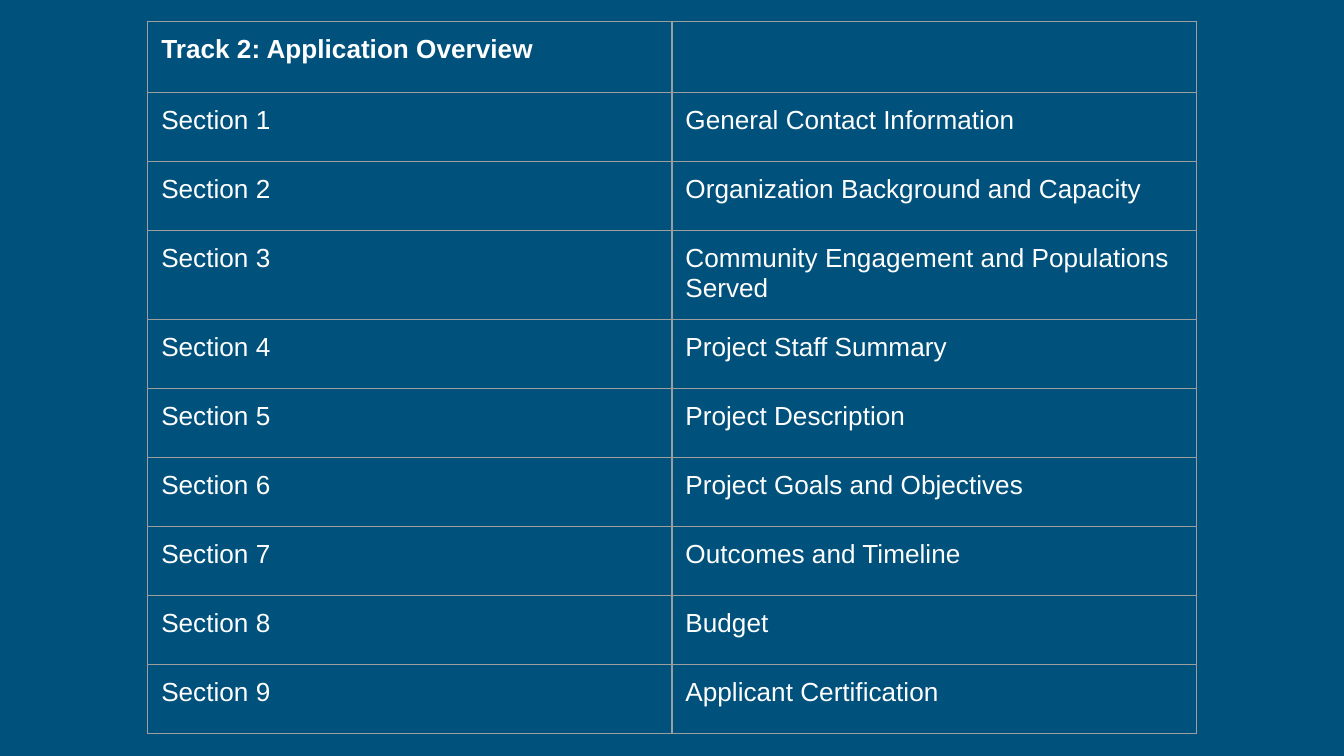
from dataclasses import dataclass

import pptx
import pptx.dml.color
import pptx.oxml
import pptx.oxml.ns
import pptx.slide
import pptx.table
import pptx.util
from pptx.util import Inches


@dataclass(frozen=True)
class Theme:
    background: str = "00517C"
    text: str = "FFFFFF"
    border: str = "9E9E9E"
    font: str = "Arial"
    text_size: float = 14
    border_width: float = 0.75


THEME = Theme()
SLIDE_WIDTH = 10
SLIDE_HEIGHT = SLIDE_WIDTH * 9 / 16
LEFT, TOP = 1.1, 0.16
COLUMN_WIDTH = 3.9
CELL_MARGIN = 0.1
HEADING_HEIGHT = 0.53
SECTION_HEIGHT = 37 / 72
TWO_LINE_HEIGHT = 0.66


@dataclass(frozen=True)
class OverviewRow:
    label: str
    topic: str
    height: float = SECTION_HEIGHT
    bold: bool = False


TOPICS = [
    "General Contact Information",
    "Organization Background and Capacity",
    "Community Engagement and Populations Served",
    "Project Staff Summary",
    "Project Description",
    "Project Goals and Objectives",
    "Outcomes and Timeline",
    "Budget",
    "Applicant Certification",
]
TWO_LINE_TOPIC = TOPICS[2]

ROWS = [OverviewRow("Track 2: Application Overview", "", HEADING_HEIGHT, bold=True)] + [
    OverviewRow(f"Section {number}", topic,
                TWO_LINE_HEIGHT if topic == TWO_LINE_TOPIC else SECTION_HEIGHT)
    for number, topic in enumerate(TOPICS, start=1)
]


def rgb(value: str) -> pptx.dml.color.RGBColor:
    return pptx.dml.color.RGBColor.from_string(value)


def add_borders(cell: pptx.table._Cell) -> None:
    properties = cell._tc.get_or_add_tcPr()
    width = pptx.util.Pt(THEME.border_width)
    for side in ("lnL", "lnR", "lnT", "lnB"):
        properties.append(pptx.oxml.parse_xml(
            f'<a:{side} {pptx.oxml.ns.nsdecls("a")} w="{width}">'
            f'<a:solidFill><a:srgbClr val="{THEME.border}"/></a:solidFill>'
            f'<a:prstDash val="solid"/></a:{side}>'
        ))


def fill_cell(cell: pptx.table._Cell, text: str, bold: bool) -> None:
    add_borders(cell)
    cell.fill.background()
    cell.margin_left = cell.margin_right = Inches(CELL_MARGIN)
    cell.margin_top = cell.margin_bottom = Inches(CELL_MARGIN)
    paragraph = cell.text_frame.paragraphs[0]
    paragraph.text = text
    for run in paragraph.runs:
        run.font.name = THEME.font
        run.font.size = pptx.util.Pt(THEME.text_size)
        run.font.bold = bold
        run.font.color.rgb = rgb(THEME.text)


def add_overview(slide: pptx.slide.Slide, rows: list[OverviewRow]) -> None:
    overview = slide.shapes.add_table(
        len(rows), 2, Inches(LEFT), Inches(TOP),
        Inches(2 * COLUMN_WIDTH), Inches(sum(row.height for row in rows)),
    ).table
    overview.first_row = overview.horz_banding = False
    for column in overview.columns:
        column.width = Inches(COLUMN_WIDTH)
    for index, row in enumerate(rows):
        overview.rows[index].height = Inches(row.height)
        for column_index, text in enumerate((row.label, row.topic)):
            fill_cell(overview.cell(index, column_index), text, row.bold)


def main() -> None:
    # Slide and background
    presentation = pptx.Presentation()
    presentation.slide_width = Inches(SLIDE_WIDTH)
    presentation.slide_height = Inches(SLIDE_HEIGHT)
    slide = presentation.slides.add_slide(presentation.slide_layouts[6])
    slide.background.fill.solid()
    slide.background.fill.fore_color.rgb = rgb(THEME.background)

    # Application sections
    add_overview(slide, ROWS)
    presentation.save("out.pptx")


if __name__ == "__main__":
    main()
